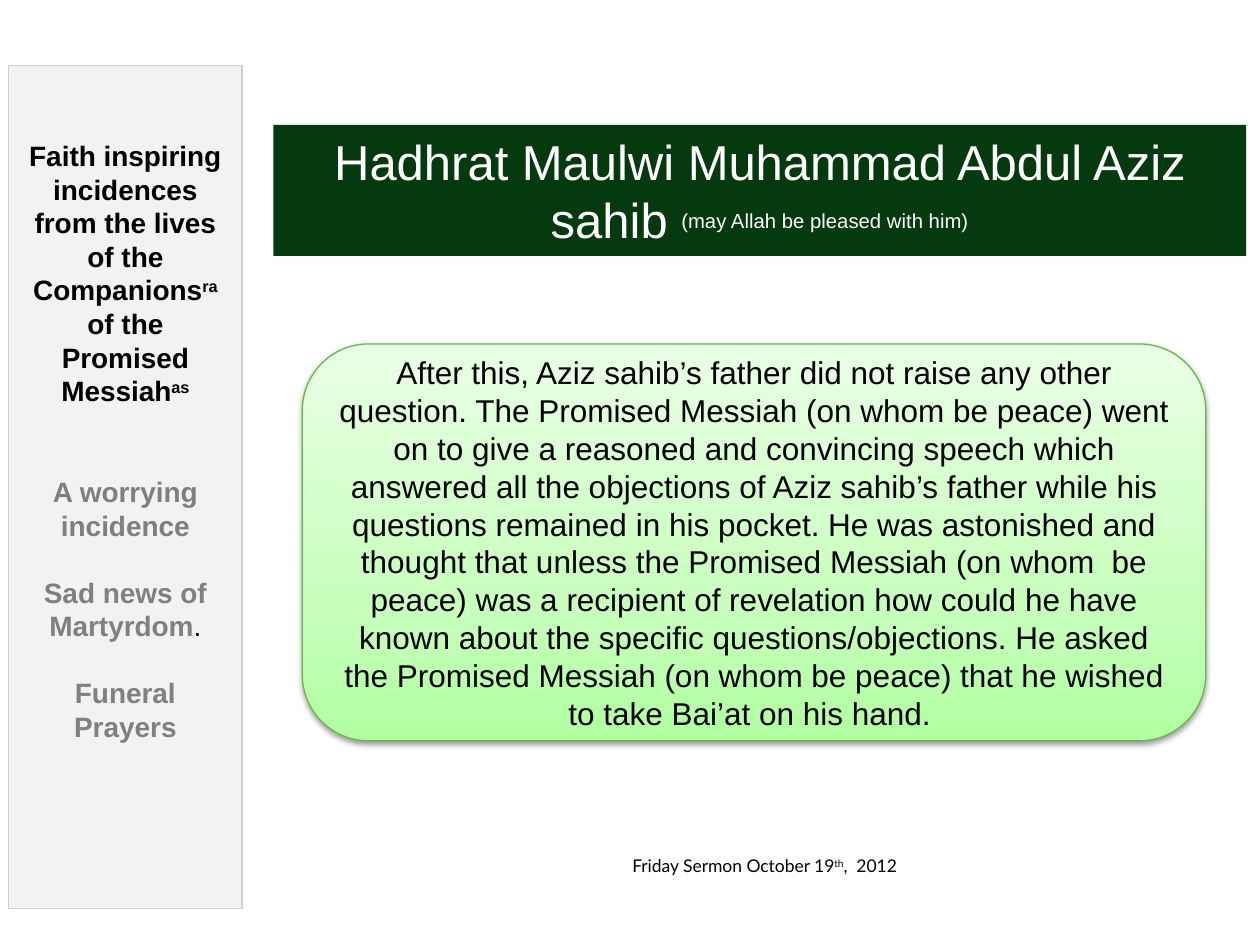
from pptx import Presentation
from pptx import util as u
from pptx.dml.color import RGBColor
from pptx.enum import shapes, text
from pptx.oxml import parse_xml
from pptx.oxml.ns import nsdecls

BLACK = RGBColor(0x00, 0x00, 0x00)
WHITE = RGBColor(0xFF, 0xFF, 0xFF)
DARK_GREEN = RGBColor(0x04, 0x3A, 0x0D)
EDGE_GREEN = RGBColor(0x62, 0xBC, 0x44)
PALE_GRAY = RGBColor(0xF2, 0xF2, 0xF2)
EDGE_GRAY = RGBColor(0xCF, 0xCF, 0xCF)
MID_GRAY = RGBColor(0x7F, 0x7F, 0x7F)
SOFT_GRAY = RGBColor(0x80, 0x80, 0x80)
GREEN_STOPS = [
    (0, RGBColor(0xB1, 0xFF, 0xA1)),
    (35, RGBColor(0xC8, 0xFF, 0xBD)),
    (100, RGBColor(0xE9, 0xFF, 0xE5)),
]

SERMON = (
    "After this, Aziz sahib’s father did not raise any other question. "
    "The Promised Messiah (on whom be peace) went on to give a reasoned and "
    "convincing speech which answered all the objections of Aziz sahib’s father "
    "while his questions remained in his pocket. He was astonished and thought "
    "that unless the Promised Messiah (on whom  be peace) was a recipient of "
    "revelation how could he have known about the specific questions/objections. "
    "He asked the Promised Messiah (on whom be peace) that he wished to take "
    "Bai’at on his hand. "
)
TOPICS = [
    (["Faith inspiring incidences from the lives of the Companions", "^ra",
      " of the Promised Messiah", "^as"], BLACK, 0),
    (["A worrying incidence"], MID_GRAY, 2),
    (["Sad news of Martyrdom"], SOFT_GRAY, 1),
    (["Funeral Prayers"], SOFT_GRAY, 1),
]
TOPIC_LINE = 19.2


class SermonSlide:
    font = "Arial"

    def __init__(self, deck):
        self.slide = deck.slides.add_slide(deck.slide_layouts[5])

    def place(self, shape, box):
        shape.left, shape.top, shape.width, shape.height = map(u.Inches, box)

    def fill_paragraph(self, paragraph, pieces, size, color, bold=False, font=None,
                       align=text.PP_ALIGN.CENTER):
        paragraph.alignment = align
        for piece in pieces:
            run = paragraph.add_run()
            run.text = piece.removeprefix("^")
            if piece.startswith("^"):
                run.font._element.set("baseline", "30000")
        paragraph.font.name = font or self.font
        paragraph.font.size = u.Pt(size)
        paragraph.font.bold = bold
        paragraph.font.color.rgb = color

    def title(self, box, pieces):
        title = self.slide.shapes.title
        self.place(title, box)
        title.fill.solid()
        title.fill.fore_color.rgb = DARK_GREEN
        frame = title.text_frame
        frame.auto_size = text.MSO_AUTO_SIZE.NONE
        frame.vertical_anchor = text.MSO_ANCHOR.TOP
        self.fill_paragraph(frame.paragraphs[0], pieces, 28, WHITE)
        frame.paragraphs[0].runs[1].font.size = u.Pt(20)

    def caption(self, box, pieces):
        frame = self.slide.shapes.add_textbox(*map(u.Inches, box)).text_frame
        frame.word_wrap = False
        self.fill_paragraph(frame.paragraphs[0], pieces, 10, BLACK, font="Lato",
                            align=text.PP_ALIGN.LEFT)

    def panel(self, preset, box, edge, anchor):
        panel = self.slide.shapes.add_shape(preset, *map(u.Inches, box))
        panel.shadow.inherit = False
        panel.line.color.rgb = edge
        panel.line.width = u.Pt(0.75)
        panel.text_frame.word_wrap = True
        panel.text_frame.vertical_anchor = anchor
        return panel

    def story(self, box, words):
        story = self.panel(shapes.MSO_SHAPE.ROUNDED_RECTANGLE, box, EDGE_GREEN,
                           text.MSO_ANCHOR.MIDDLE)
        stops = "".join(
            f'<a:gs pos="{at * 1000}"><a:srgbClr val="{color}"/></a:gs>'
            for at, color in GREEN_STOPS)
        properties = story._element.spPr
        properties.find("{*}prstGeom").addnext(parse_xml(
            f'<a:gradFill {nsdecls("a")} rotWithShape="1"><a:gsLst>{stops}</a:gsLst>'
            '<a:lin ang="16200000" scaled="0"/></a:gradFill>'))
        properties.find("{*}effectLst").append(parse_xml(
            f'<a:outerShdw {nsdecls("a")} blurRad="{u.Pt(3.1)}" dist="{u.Pt(1.6)}" '
            'dir="5400000" rotWithShape="0"><a:srgbClr val="000000">'
            '<a:alpha val="38000"/></a:srgbClr></a:outerShdw>'))
        self.fill_paragraph(story.text_frame.paragraphs[0], [words], 18, BLACK)

    def sidebar(self, box, topics):
        sidebar = self.panel(shapes.MSO_SHAPE.RECTANGLE, box, EDGE_GRAY,
                             text.MSO_ANCHOR.TOP)
        sidebar.fill.solid()
        sidebar.fill.fore_color.rgb = PALE_GRAY
        frame = sidebar.text_frame
        frame.margin_top = u.Inches(0.58)
        for index, (pieces, color, gap) in enumerate(topics):
            paragraph = frame.add_paragraph() if index else frame.paragraphs[0]
            if gap:
                paragraph.space_before = u.Pt(gap * TOPIC_LINE)
            self.fill_paragraph(paragraph, pieces, 16, color, bold=True)
        stop = frame.paragraphs[2].add_run()
        stop.text = "."
        stop.font.bold = False
        stop.font.color.rgb = BLACK


def main():
    deck = Presentation()
    deck.slide_width, deck.slide_height = u.Inches(10), u.Inches(7.5)
    page = SermonSlide(deck)
    page.title((2.17, 0.99, 7.72, 1.04),
               ["Hadhrat Maulwi Muhammad Abdul Aziz sahib ",
                "^(may Allah be pleased with him)"])
    page.caption((4.92, 6.74, 2.36, 0.27),
                 ["Friday Sermon October 19", "^th", ",  2012"])
    page.story((2.4, 2.73, 7.17, 3.15), SERMON)
    page.sidebar((0.07, 0.52, 1.85, 6.69), TOPICS)
    deck.save("out.pptx")


if __name__ == "__main__":
    main()
